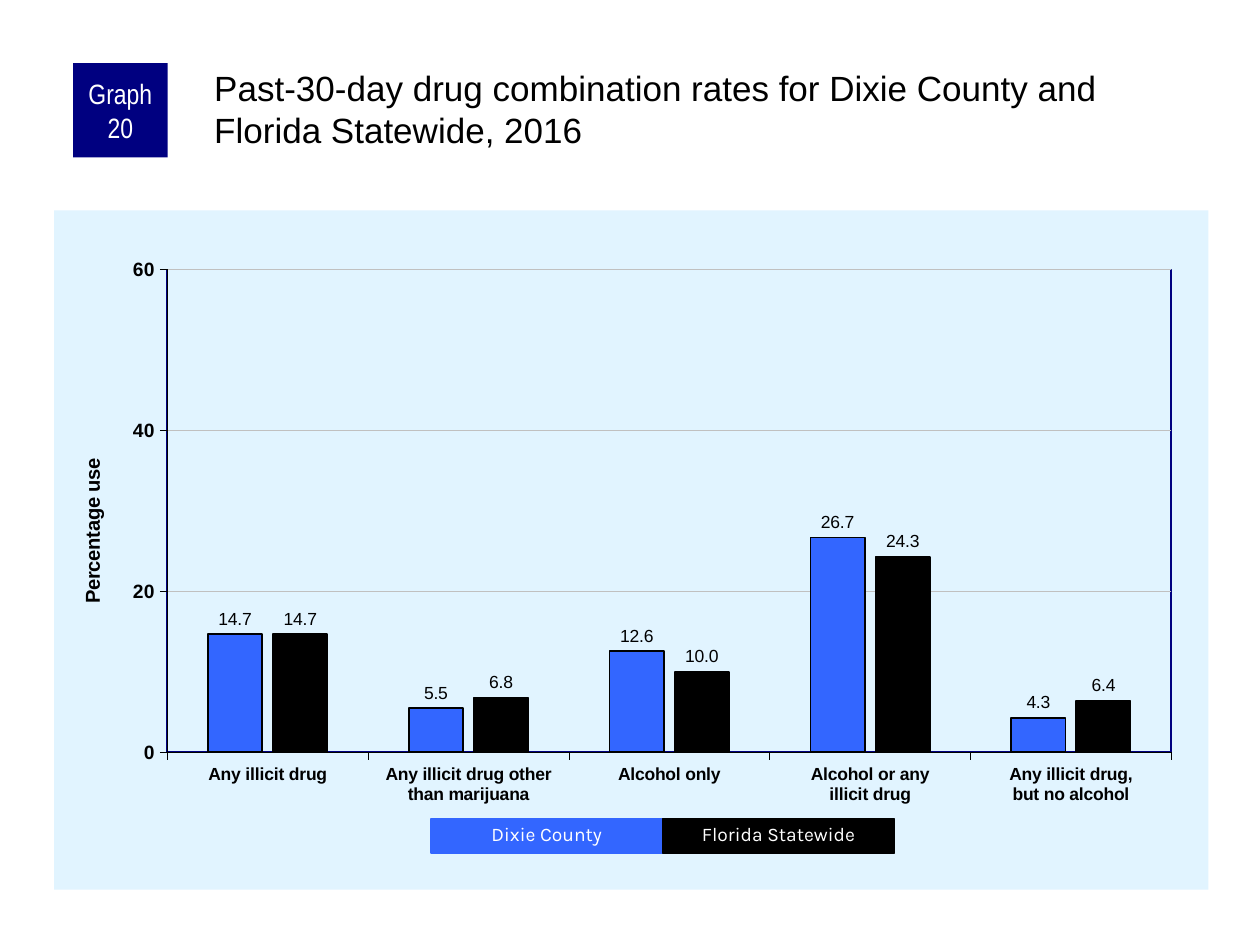
from dataclasses import dataclass

from lxml import etree
from pptx import Presentation
from pptx.chart.data import CategoryChartData
from pptx.dml.color import RGBColor
from pptx.enum.chart import XL_CHART_TYPE as ChartType
from pptx.enum.chart import XL_LABEL_POSITION as LabelPosition
from pptx.enum.chart import XL_TICK_MARK as TickMark
from pptx.enum.shapes import MSO_SHAPE as Shape
from pptx.enum.text import MSO_ANCHOR as Anchor
from pptx.enum.text import MSO_AUTO_SIZE as AutoSize
from pptx.enum.text import PP_ALIGN as Align
from pptx.oxml import parse_xml
from pptx.oxml.ns import nsdecls, qn
from pptx.util import Inches, Pt

WIDTH, HEIGHT = 10, 7.5
BLACK, WHITE, NAVY, BLUE = "000000", "FFFFFF", "000080", "3366FF"
PALE_BLUE, GREY = "E1F4FF", "C0C0C0"


@dataclass
class Area:
    """A rectangle given as shares of the slide's width and height."""
    left: float
    top: float
    width: float
    height: float

    def lengths(self) -> tuple:
        return (Inches(self.left * WIDTH), Inches(self.top * HEIGHT),
                Inches(self.width * WIDTH), Inches(self.height * HEIGHT))


@dataclass
class Region:
    name: str
    values: tuple
    color: str


CATEGORIES = ("Any illicit drug", "Any illicit drug other than marijuana",
              "Alcohol only", "Alcohol or any\nillicit drug",
              "Any illicit drug,\nbut no alcohol")
REGIONS = (
    Region("Dixie County", (14.7, 5.5, 12.6, 26.7, 4.3), BLUE),
    Region("Florida Statewide", (14.7, 6.8, 10.0, 24.3, 6.4), BLACK),
)

CHART_AREA = Area(0.043, 1.67 / HEIGHT, 0.916, 5.39 / HEIGHT)
BADGE_AREA = Area(0.058, 0.5 / HEIGHT, 0.075, 0.75 / HEIGHT)
TITLE_AREA = Area(0.167, 0.5 / HEIGHT, 0.792, 0.83 / HEIGHT)
LEGEND_AREA = Area(0.342, 6.5 / HEIGHT, 0.184, 0.27 / HEIGHT)
PLOT_SHARES = {"x": 0.098, "y": 0.087, "w": 0.87, "h": 0.711}


def rgb(color: str) -> RGBColor:
    return RGBColor.from_string(color)


def set_font(font, size: float, color: str, name: str = "Arial", bold: bool = False) -> None:
    font.size, font.name, font.bold = Pt(size), name, bold
    font.color.rgb = rgb(color)


def set_fill(shape, color: str) -> None:
    shape.fill.solid()
    shape.fill.fore_color.rgb = rgb(color)


def set_line(line, color: str, width: float) -> None:
    line.color.rgb = rgb(color)
    line.width = Pt(width)


def set_insets(frame, left: float, top: float, right: float, bottom: float) -> None:
    frame.margin_left, frame.margin_top = Inches(left), Inches(top)
    frame.margin_right, frame.margin_bottom = Inches(right), Inches(bottom)


def add_rectangle(page, area: Area, text: str, color: str):
    box = page.shapes.add_shape(Shape.RECTANGLE, *area.lengths())
    box.shadow.inherit = False
    set_fill(box, color)
    box.line.fill.background()
    box.text_frame.word_wrap = True
    para = box.text_frame.paragraphs[0]
    para.text, para.alignment = text, Align.CENTER
    return box


def style_axis(axis, size: float) -> None:
    axis.major_tick_mark, axis.minor_tick_mark = TickMark.OUTSIDE, TickMark.NONE
    set_font(axis.tick_labels.font, size, BLACK, bold=True)
    set_line(axis.format.line, BLACK, 0.25)


def style_frame(chart) -> None:
    """Place the plot and give the chart its background and plot border."""
    space = chart.element
    plot_area = space.find(".//" + qn("c:plotArea"))
    for layout in plot_area.findall(qn("c:layout")):
        plot_area.remove(layout)
    shares = "".join(f'<c:{key} val="{share}"/>' for key, share in PLOT_SHARES.items())
    plot_area.insert(0, parse_xml(
        f'<c:layout {nsdecls("c")}><c:manualLayout><c:layoutTarget val="inner"/>'
        f'<c:xMode val="edge"/><c:yMode val="edge"/>{shares}</c:manualLayout></c:layout>'))
    plot_area.append(parse_xml(
        f'<c:spPr {nsdecls("c", "a")}><a:noFill/><a:ln w="{Pt(1)}"><a:solidFill>'
        f'<a:srgbClr val="{NAVY}"/></a:solidFill></a:ln></c:spPr>'))
    background = etree.fromstring(
        f'<c:spPr {nsdecls("c", "a")}><a:solidFill><a:srgbClr val="{PALE_BLUE}"/>'
        '</a:solidFill><a:ln><a:noFill/></a:ln></c:spPr>')
    space.find(qn("c:chart")).addnext(background)


def add_rates_chart(page) -> None:
    data = CategoryChartData(number_format="0.0")
    data.categories = CATEGORIES
    for region in REGIONS:
        data.add_series(region.name, region.values)
    chart = page.shapes.add_chart(
        ChartType.COLUMN_CLUSTERED, *CHART_AREA.lengths(), data).chart
    chart.has_legend = chart.has_title = False
    set_font(chart.font, 11.5, BLACK)

    plot = chart.plots[0]
    plot.gap_width, plot.overlap, plot.vary_by_categories = 150, -20, False
    for series, region in zip(plot.series, REGIONS):
        set_fill(series.format, region.color)
        set_line(series.format.line, BLACK, 1)
        labels = series.data_labels
        labels.show_value = True
        labels.number_format, labels.number_format_is_linked = "0.0", False
        labels.position = LabelPosition.OUTSIDE_END
        set_font(labels.font, 10, BLACK)

    style_axis(chart.category_axis, 10)
    value_axis = chart.value_axis
    style_axis(value_axis, 11)
    value_axis.minimum_scale, value_axis.maximum_scale = 0, 60
    value_axis.major_unit = 20
    value_axis.tick_labels.number_format = "0"
    value_axis.tick_labels.number_format_is_linked = False
    set_line(value_axis.major_gridlines.format.line, GREY, 0.25)
    para = value_axis.axis_title.text_frame.paragraphs[0]
    para.text = "Percentage use"
    set_font(para.font, 11.5, BLACK, bold=True)
    style_frame(chart)


def add_badge(page) -> None:
    frame = add_rectangle(page, BADGE_AREA, "Graph 20", NAVY).text_frame
    frame.vertical_anchor = Anchor.MIDDLE
    set_insets(frame, 0.05, 0, 0.05, 0)
    set_font(frame.paragraphs[0].font, 16, WHITE, "Arial Narrow")


def add_title(page) -> None:
    frame = page.shapes.add_textbox(*TITLE_AREA.lengths()).text_frame
    frame.word_wrap = True
    set_insets(frame, 0.03, 0.03, 0, 0)
    para = frame.paragraphs[0]
    para.text = ("Past-30-day drug combination rates for Dixie County "
                 "and Florida Statewide, 2016")
    set_font(para.font, 20, BLACK)


def add_legend(page) -> None:
    first = LEGEND_AREA
    for column, region in enumerate(REGIONS):
        area = Area(first.left + column * first.width, first.top, first.width, first.height)
        box = add_rectangle(page, area, region.name, region.color)
        set_line(box.line, region.color, 0.75)
        frame = box.text_frame
        frame.vertical_anchor, frame.auto_size = Anchor.TOP, AutoSize.SHAPE_TO_FIT_TEXT
        para = frame.paragraphs[0]
        para.line_spacing = 0.9
        set_font(para.font, 11, WHITE, "Karla")


def main() -> None:
    deck = Presentation()
    deck.slide_width, deck.slide_height = Inches(WIDTH), Inches(HEIGHT)
    page = deck.slides.add_slide(deck.slide_layouts[6])
    add_rates_chart(page)
    add_badge(page)
    add_title(page)
    add_legend(page)
    deck.save("out.pptx")


if __name__ == "__main__":
    main()
